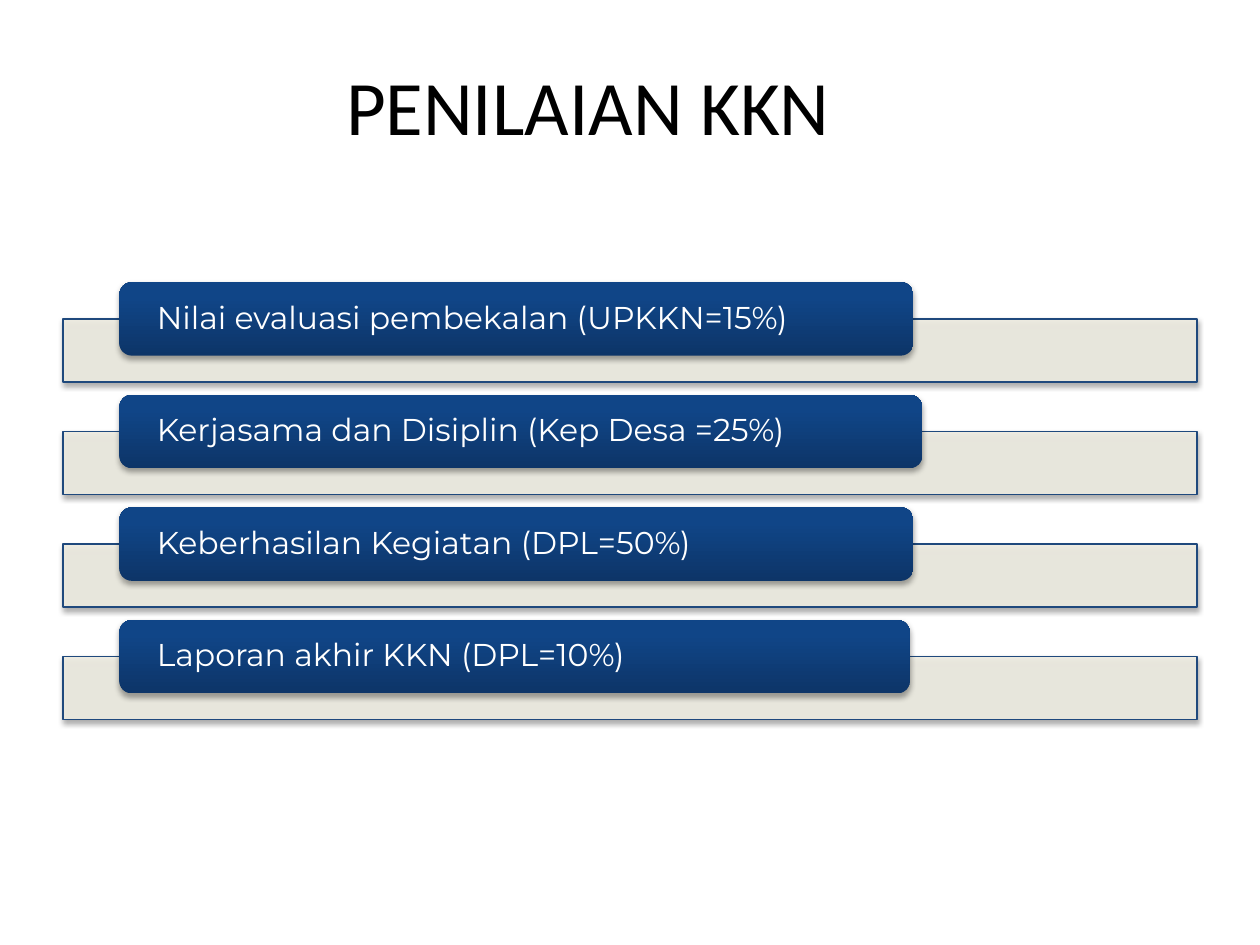
"""Build the KKN assessment slide: a title above four weighted criteria."""
from copy import deepcopy

from lxml import etree
from pptx import Presentation
from pptx.dml.color import RGBColor
from pptx.enum.shapes import MSO_SHAPE
from pptx.enum.text import MSO_ANCHOR, PP_ALIGN
from pptx.oxml.ns import qn
from pptx.util import Cm, Pt

BLACK = RGBColor(0x00, 0x00, 0x00)
WHITE = RGBColor(0xFF, 0xFF, 0xFF)
CREAM = RGBColor(0xEE, 0xEC, 0xE1)
NAVY = RGBColor(0x1F, 0x49, 0x7D)
GRADIENT = [
    (0, RGBColor(0x0D, 0x35, 0x68)),
    (0.8, RGBColor(0x10, 0x45, 0x87)),
    (1, RGBColor(0x0E, 0x45, 0x8A)),
]
RECTANGLE = MSO_SHAPE.RECTANGLE
ROUNDED = MSO_SHAPE.ROUNDED_RECTANGLE
MIDDLE = MSO_ANCHOR.MIDDLE
LEFT, CENTER = PP_ALIGN.LEFT, PP_ALIGN.CENTER

CRITERIA = [
    ("Nilai evaluasi pembekalan (UPKKN=15%)", 16),
    ("Kerjasama dan Disiplin (Kep Desa =25%)", 16.18),
    ("Keberhasilan Kegiatan (DPL=50%)", 16),
    ("Laporan akhir KKN (DPL=10%)", 15.93),
]
FIRST_TOP, PITCH = 5.69, 2.27


def write(shape, text, font, size, color, align=LEFT, inset=0.25, spacing=1.0):
    frame = shape.text_frame
    frame.word_wrap = True
    frame.vertical_anchor = MIDDLE
    frame.margin_left = frame.margin_right = Cm(inset)
    frame.margin_top = frame.margin_bottom = 0
    paragraph = frame.paragraphs[0]
    paragraph.alignment = align
    paragraph.line_spacing = spacing
    run = paragraph.add_run()
    run.text = text
    run.font.name = font
    run.font.size = Pt(size)
    run.font.color.rgb = color


def add_shadowed(kind, left, top, width, height):
    shape = slide.shapes.add_shape(kind, Cm(left), Cm(top), Cm(width), Cm(height))
    shape.shadow.inherit = False
    effects = shape._element.spPr.find(qn("a:effectLst"))
    shadow = etree.SubElement(effects, qn("a:outerShdw"), blurRad="40000",
                              dist="23000", dir="5400000", rotWithShape="0")
    shade = etree.SubElement(shadow, qn("a:srgbClr"), val="000000")
    etree.SubElement(shade, qn("a:alpha"), val="35000")
    return shape


prs = Presentation()
prs.slide_width, prs.slide_height = Cm(25.4), Cm(19.05)
slide = prs.slides.add_slide(prs.slide_layouts[6])

title = slide.shapes.add_textbox(Cm(0.43), Cm(0.84), Cm(22.86), Cm(2.54))
write(title, "PENILAIAN KKN", font="Calibri", size=44, color=BLACK, align=CENTER)

for row, (criterion, label_width) in enumerate(CRITERIA):
    top = FIRST_TOP + row * PITCH

    bar = add_shadowed(RECTANGLE, 1.27, top + 0.74, 22.86, 1.27)
    bar.fill.solid()
    bar.fill.fore_color.rgb = CREAM
    bar_color = bar._element.spPr.find(qn("a:solidFill"))[0]
    etree.SubElement(bar_color, qn("a:alpha"), val="90000")
    bar.line.color.rgb = NAVY
    bar.line.width = Pt(0.75)

    label = add_shadowed(ROUNDED, 2.41, top, label_width, 1.48)
    label.fill.gradient()
    label.fill.gradient_angle = 90
    stops = label._element.spPr.find(qn("a:gradFill")).find(qn("a:gsLst"))
    stops.append(deepcopy(stops[0]))
    for stop, (position, color) in zip(label.fill.gradient_stops, GRADIENT):
        stop.position = position
        stop.color.rgb = color
    label.line.fill.background()
    write(label, criterion, font="Montserrat", size=18, color=WHITE,
          inset=0.68, spacing=0.9)

prs.save("out.pptx")
